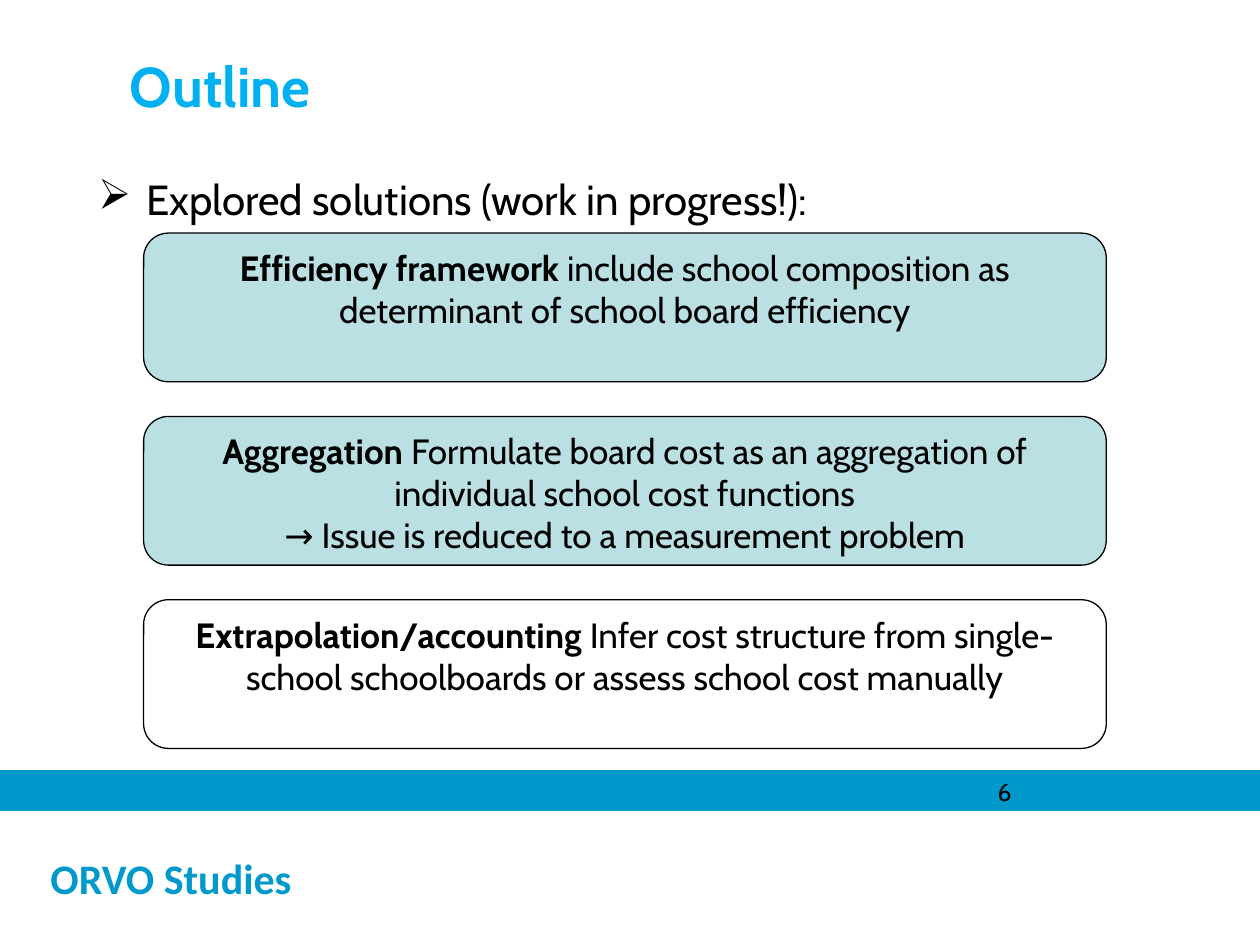
import pptx
import pptx.dml.color
import pptx.enum.shapes
import pptx.enum.text
import pptx.oxml.ns
import pptx.util
from lxml import etree
from pptx.util import Inches

SHAPES = pptx.enum.shapes.MSO_SHAPE
ANCHOR = pptx.enum.text.MSO_ANCHOR
ALIGN = pptx.enum.text.PP_ALIGN

BLACK = "000000"
WHITE = "FFFFFF"
BAND_BLUE = "0099CC"
TITLE_BLUE = "00B0F0"
CARD_TEAL = "BBE0E3"

CARDS = [
    (CARD_TEAL, "Efficiency framework ",
     ["include school composition as determinant of school board efficiency"]),
    (CARD_TEAL, "Aggregation ",
     ["Formulate board cost as an aggregation of individual school cost functions",
      "→ Issue is reduced to a measurement problem"]),
    (None, "Extrapolation/accounting ",
     ["Infer cost structure from single-school schoolboards or assess school cost manually"]),
]


def color(hex_value):
    return pptx.dml.color.RGBColor.from_string(hex_value)


def add_run(paragraph, text, size, hex_value=BLACK, bold=False, font_name="Cabin"):
    run = paragraph.add_run()
    run.text = text
    run.font.name = font_name
    run.font.size = pptx.util.Pt(size)
    run.font.bold = bold
    run.font.color.rgb = color(hex_value)


def add_box(slide, preset, box, fill=None, line=None):
    shape = slide.shapes.add_shape(preset, *map(Inches, box))
    shape.shadow.inherit = False
    if fill:
        shape.fill.solid()
        shape.fill.fore_color.rgb = color(fill)
    else:
        shape.fill.background()
    if line:
        shape.line.color.rgb = color(line)
        shape.line.width = pptx.util.Pt(0.75)
    else:
        shape.line.fill.background()
    return shape


def add_text_frame(slide, box):
    text_frame = slide.shapes.add_textbox(*map(Inches, box)).text_frame
    text_frame.word_wrap = True
    return text_frame


def add_footer(slide, box):
    text_frame = add_box(slide, SHAPES.RECTANGLE, box, WHITE).text_frame
    text_frame.margin_left = Inches(0.4)
    text_frame.vertical_anchor = ANCHOR.MIDDLE
    paragraph = text_frame.paragraphs[0]
    paragraph.alignment = ALIGN.LEFT
    add_run(paragraph, "ORVO Studies", 24, BAND_BLUE, True, "Calibri")


def add_number_band(slide, box):
    left, top, width, height = box
    add_box(slide, SHAPES.RECTANGLE, box, BAND_BLUE, BAND_BLUE)
    number_box = (left + 7.82, top, 2.08, 0.25)
    add_run(add_text_frame(slide, number_box).paragraphs[0], "6", 14)


def add_title(slide, box):
    text_frame = add_text_frame(slide, box)
    text_frame.margin_left = Inches(0.6)
    add_run(text_frame.paragraphs[0], "Outline", 32, TITLE_BLUE, True)


def add_lead_bullet(slide, box):
    text_frame = add_text_frame(slide, box)
    text_frame.margin_left = text_frame.margin_right = 0
    text_frame.margin_top = text_frame.margin_bottom = 0
    paragraph = text_frame.paragraphs[0]
    properties = paragraph._p.get_or_add_pPr()
    indent = Inches(0.38)
    properties.set("marL", str(indent))
    properties.set("indent", str(-indent))
    bullet = etree.SubElement(properties, pptx.oxml.ns.qn("a:buChar"))
    bullet.set("char", "➢")
    add_run(paragraph, "Explored solutions (work in progress!):", 24)


def add_card(slide, box, fill, heading, lines):
    text_frame = add_box(slide, SHAPES.ROUNDED_RECTANGLE, box, fill, BLACK).text_frame
    text_frame.word_wrap = True
    text_frame.vertical_anchor = ANCHOR.TOP
    for index, line in enumerate(lines):
        paragraph = text_frame.add_paragraph() if index else text_frame.paragraphs[0]
        paragraph.alignment = ALIGN.CENTER
        if index == 0:
            add_run(paragraph, heading, 20, bold=True)
        add_run(paragraph, line, 20)


def add_cards(slide, box):
    """Stack the cards in the box with equal gaps."""
    left, top, width, height = box
    card_height = 1.18
    step = (height - card_height) / (len(CARDS) - 1)
    for index, card in enumerate(CARDS):
        add_card(slide, (left, top + index * step, width, card_height), *card)


def main():
    presentation = pptx.Presentation()
    presentation.slide_width = Inches(10)
    presentation.slide_height = Inches(7.5)
    slide = presentation.slides.add_slide(presentation.slide_layouts[6])
    add_footer(slide, (0, 6.44, 10, 1.06))
    add_number_band(slide, (0, 6.12, 10, 0.31))
    add_title(slide, (0.43, 0.36, 8.81, 0.64))
    add_lead_bullet(slide, (0.78, 1.38, 8.46, 0.42))
    add_cards(slide, (1.14, 1.85, 7.64, 4.09))
    presentation.save("out.pptx")


if __name__ == "__main__":
    main()
